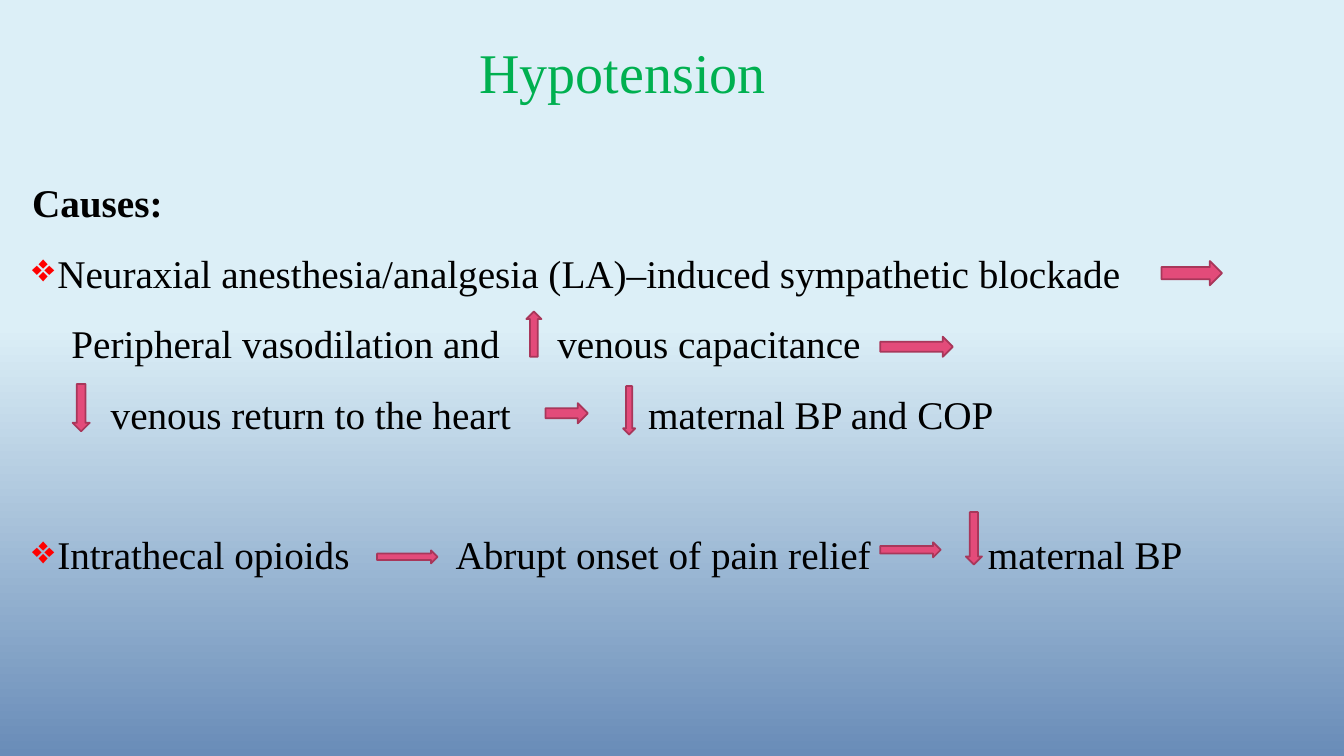
import pptx
import pptx.util
import pptx.dml.color
import pptx.enum.shapes
import pptx.enum.text
import pptx.oxml.ns
from lxml import etree

Inches, Pt = pptx.util.Inches, pptx.util.Pt
RGB = pptx.dml.color.RGBColor
KIND = pptx.enum.shapes.MSO_SHAPE
TEXT = pptx.enum.text

SKY, BLUE = RGB(0xDC, 0xEF, 0xF7), RGB(0x69, 0x8C, 0xB8)
GREEN, BLACK = RGB(0x00, 0xB0, 0x50), RGB(0, 0, 0)
RED = RGB(0xFF, 0, 0)
PINK, ROSE = RGB(0xE3, 0x4B, 0x7A), RGB(0xA8, 0x37, 0x5A)
FONT = "Times New Roman"

# Content: text, bold, bullet, space before (pt), tab stops (in)
TITLE = "Hypotension"
LINES = [
    ("Causes:", True, False, 0, []),
    ("Neuraxial anesthesia/analgesia (LA)–induced sympathetic blockade",
     False, True, 10, []),
    ("\tPeripheral vasodilation and\tvenous capacitance",
     False, False, 10, [0.39, 5.21]),
    ("\tvenous return to the heart\tmaternal BP and COP",
     False, False, 10, [0.78, 6.11]),
    ("Intrathecal opioids\tAbrupt onset of pain relief\tmaternal BP",
     False, True, 60, [4.2, 9.48]),
]

# Arrows: shape, left, top, width, height (in)
RIGHT, UP, DOWN = KIND.RIGHT_ARROW, KIND.UP_ARROW, KIND.DOWN_ARROW
ARROWS = [
    (DOWN, 0.72, 3.81, 0.17, 0.47),
    (RIGHT, 8.73, 3.34, 0.72, 0.2),
    (RIGHT, 5.41, 4, 0.42, 0.2),
    (UP, 5.22, 3.09, 0.15, 0.45),
    (RIGHT, 11.52, 2.59, 0.6, 0.24),
    (DOWN, 6.18, 3.83, 0.12, 0.48),
    (RIGHT, 3.74, 5.46, 0.6, 0.13),
    (DOWN, 9.58, 5.08, 0.16, 0.52),
    (RIGHT, 8.73, 5.38, 0.6, 0.15),
]


def add_tag(root, name, **attrs):
    node = etree.SubElement(root, pptx.oxml.ns.qn(name))
    for key, value in attrs.items():
        node.set(key, str(value))
    return node


def add_box(slide, left, top, width, height, anchor):
    box = slide.shapes.add_textbox(*map(Inches, (left, top, width, height)))
    frame = box.text_frame
    frame.word_wrap = True
    frame.vertical_anchor = anchor
    return frame


def add_run(para, text, size, color, bold=False):
    run = para.add_run()
    run.text = text
    font = run.font
    font.name, font.size, font.bold = FONT, Pt(size), bold
    font.color.rgb = color


def set_marks(para, bullet, tabs):
    props = para._p.get_or_add_pPr()
    if bullet:
        props.set("marL", str(Inches(0.25)))
        props.set("indent", str(Inches(-0.25)))
        add_tag(add_tag(props, "a:buClr"), "a:srgbClr", val=RED)
        add_tag(props, "a:buChar", char="❖")
    if tabs:
        stops = add_tag(props, "a:tabLst")
        for pos in tabs:
            add_tag(stops, "a:tab", pos=Inches(pos), algn="l")


def main():
    deck = pptx.Presentation()
    deck.slide_width, deck.slide_height = Inches(13.33), Inches(7.5)
    slide = deck.slides.add_slide(deck.slide_layouts[6])

    # Background
    fill = slide.background.fill
    fill.gradient()
    fill.gradient_angle = 270
    for stop, pos, color in zip(fill.gradient_stops, (0.43, 1), (SKY, BLUE)):
        stop.position = pos
        stop.color.rgb = color

    # Title
    frame = add_box(slide, 2.77, 0.17, 6.81, 1.15, TEXT.MSO_ANCHOR.MIDDLE)
    para = frame.paragraphs[0]
    para.alignment = TEXT.PP_ALIGN.CENTER
    para.line_spacing = 0.9
    add_run(para, TITLE, 40, GREEN)

    # Causes
    frame = add_box(slide, 0.22, 1.63, 12.93, 5.3, TEXT.MSO_ANCHOR.TOP)
    for num, (text, bold, bullet, space, tabs) in enumerate(LINES):
        para = frame.add_paragraph() if num else frame.paragraphs[0]
        set_marks(para, bullet, tabs)
        para.line_spacing = 1.2
        para.space_before = Pt(space)
        add_run(para, text, 28, BLACK, bold)

    # Arrows
    for kind, *place in ARROWS:
        arrow = slide.shapes.add_shape(kind, *map(Inches, place))
        arrow.shadow.inherit = False
        arrow.fill.solid()
        arrow.fill.fore_color.rgb = PINK
        arrow.line.color.rgb = ROSE
        arrow.line.width = Pt(1.25)

    deck.save("out.pptx")


if __name__ == "__main__":
    main()
